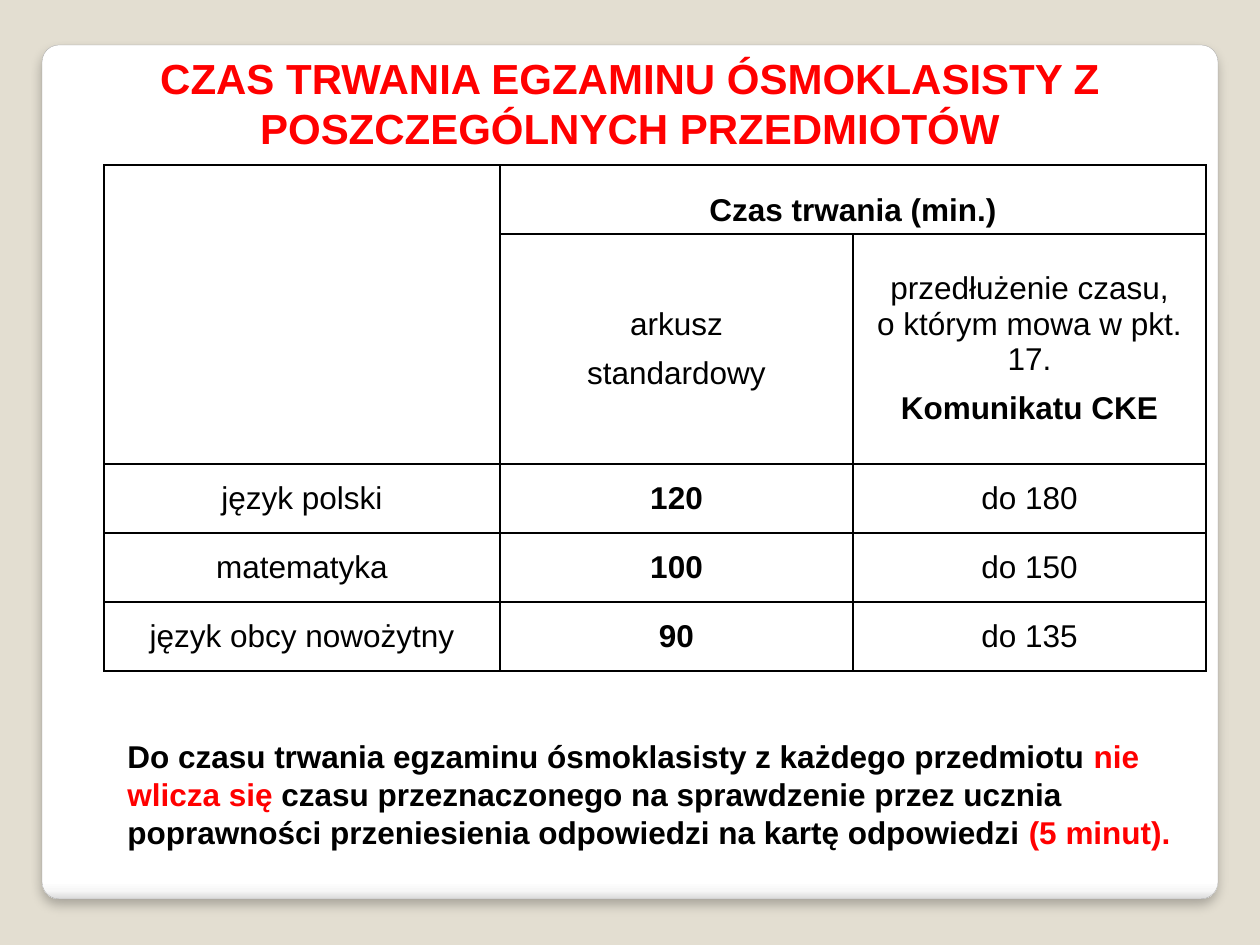
from lxml import etree
from pptx import Presentation
from pptx.dml.color import RGBColor
from pptx.enum.shapes import MSO_SHAPE
from pptx.enum.text import MSO_ANCHOR, PP_ALIGN
from pptx.oxml import parse_xml
from pptx.oxml.ns import nsdecls
from pptx.util import Pt

ROUNDED = MSO_SHAPE.ROUNDED_RECTANGLE
TOP, MIDDLE, BOTTOM = MSO_ANCHOR.TOP, MSO_ANCHOR.MIDDLE, MSO_ANCHOR.BOTTOM
LEFT, CENTER = PP_ALIGN.LEFT, PP_ALIGN.CENTER
SCALE = 914400 / 126

THEME = {
    "font": "Arial",
    "background": "E3DED1",
    "panel_stops": [(0, "FFFFFF"), (98, "FFFFFF"), (99, "F7F7F7"), (100, "DADADA")],
    "panel_line": "A4A4A4",
    "cell": "FFFFFF",
    "text": "000000",
    "accent": "FF0000",
    "title_size": 24,
    "body_size": 18,
}


def px(*lengths):
    """Turn pixel lengths into a list of EMU."""
    return [round(length * SCALE) for length in lengths]


def style_span(span, color, size, bold):
    values = {"name": THEME["font"], "size": Pt(size), "bold": bold}
    for name, value in values.items():
        setattr(span.font, name, value)
    span.font.color.rgb = RGBColor.from_string(color)


deck = Presentation()
deck.slide_width, deck.slide_height = px(1260, 945)
slide = deck.slides.add_slide(deck.slide_layouts[6])
slide.background.fill.solid()
slide.background.fill.fore_color.rgb = RGBColor.from_string(THEME["background"])

# Rounded panel behind the content
panel = slide.shapes.add_shape(ROUNDED, *px(42, 45, 1176, 854))
panel.adjustments[0] = 0.02
panel.line.color.rgb = RGBColor.from_string(THEME["panel_line"])
panel.line.width = Pt(0.16)
panel.fill.gradient()
panel.fill.gradient_angle = 270
stops = panel.fill._fill._gradFill.gsLst
for stop in list(stops):
    stops.remove(stop)
for position, color in THEME["panel_stops"]:
    stops.append(parse_xml(
        f'<a:gs {nsdecls("a")} pos="{position * 1000}"><a:srgbClr val="{color}"/></a:gs>'))
panel.shadow.inherit = False
effects = panel._element.spPr.find("{*}effectLst")
effects.append(parse_xml(
    f'<a:outerShdw {nsdecls("a")} blurRad="{Pt(6)}" dist="{Pt(4)}" dir="5400000">'
    '<a:srgbClr val="000000"><a:alpha val="25000"/></a:srgbClr></a:outerShdw>'))

# Table of exam times: each cell is a list of (paragraph, bold)
subjects = [
    ("język polski", "120", "do 180"),
    ("matematyka", "100", "do 150"),
    ("język obcy nowożytny", "90", "do 135"),
]
rows = [
    [[], [("Czas trwania (min.)", True)], []],
    [
        [],
        [("arkusz", False), ("standardowy", False)],
        [("przedłużenie czasu,\vo którym mowa w pkt. 17.", False), ("Komunikatu CKE", True)],
    ],
]
for subject, standard, extended in subjects:
    rows.append([[(subject, False)], [(standard, True)], [(extended, False)]])

frame = slide.shapes.add_table(len(rows), 3, *px(104, 165, 1102, 506))
table = frame.table
table.first_row = table.horz_banding = False
for column, width in zip(table.columns, px(396, 353, 353)):
    column.width = width
for row, height in zip(table.rows, px(69, 230, 69, 69, 69)):
    row.height = height
table.cell(0, 0).merge(table.cell(1, 0))
table.cell(0, 1).merge(table.cell(0, 2))

side, edge = px(1, 6)
cell_format = {"margin_left": side, "margin_right": side,
               "margin_top": edge, "margin_bottom": edge}
for row_index, row in enumerate(rows):
    for column_index, paragraphs in enumerate(row):
        cell = table.cell(row_index, column_index)
        for name, value in cell_format.items():
            setattr(cell, name, value)
        cell.vertical_anchor = MIDDLE if row_index else BOTTOM
        properties = cell._tc.get_or_add_tcPr()
        for border in ("lnL", "lnR", "lnT", "lnB"):
            line = etree.fromstring(
                f'<a:{border} {nsdecls("a")} w="{Pt(1)}"><a:solidFill>'
                f'<a:srgbClr val="{THEME["text"]}"/></a:solidFill></a:{border}>')
            properties.append(line)
        cell.fill.solid()
        cell.fill.fore_color.rgb = RGBColor.from_string(THEME["cell"])
        for index, (text, bold) in enumerate(paragraphs):
            text_frame = cell.text_frame
            para = text_frame.add_paragraph() if index else text_frame.paragraphs[0]
            para.text = text
            para.alignment = CENTER
            para.space_after = Pt(8)
            for span in para.runs:
                style_span(span, THEME["text"], THEME["body_size"], bold)

# Title and closing note
title = [("CZAS TRWANIA EGZAMINU ÓSMOKLASISTY Z POSZCZEGÓLNYCH PRZEDMIOTÓW", "accent")]
note = [
    ("Do czasu trwania egzaminu ósmoklasisty z każdego przedmiotu ", "text"),
    ("nie wlicza się ", "accent"),
    ("czasu przeznaczonego na sprawdzenie przez ucznia poprawności "
     "przeniesienia odpowiedzi na kartę odpowiedzi ", "text"),
    ("(5 minut).", "accent"),
]
text_boxes = [
    ((0, 45, 1260, 115), title, "title_size", CENTER, MIDDLE),
    ((115, 731, 1101, 165), note, "body_size", LEFT, TOP),
]
for place, spans, size, alignment, anchor in text_boxes:
    box = slide.shapes.add_textbox(*px(*place))
    box.text_frame.word_wrap = True
    box.text_frame.vertical_anchor = anchor
    para = box.text_frame.paragraphs[0]
    para.alignment = alignment
    for text, color in spans:
        span = para.add_run()
        span.text = text
        style_span(span, THEME[color], THEME[size], True)

deck.save("out.pptx")
